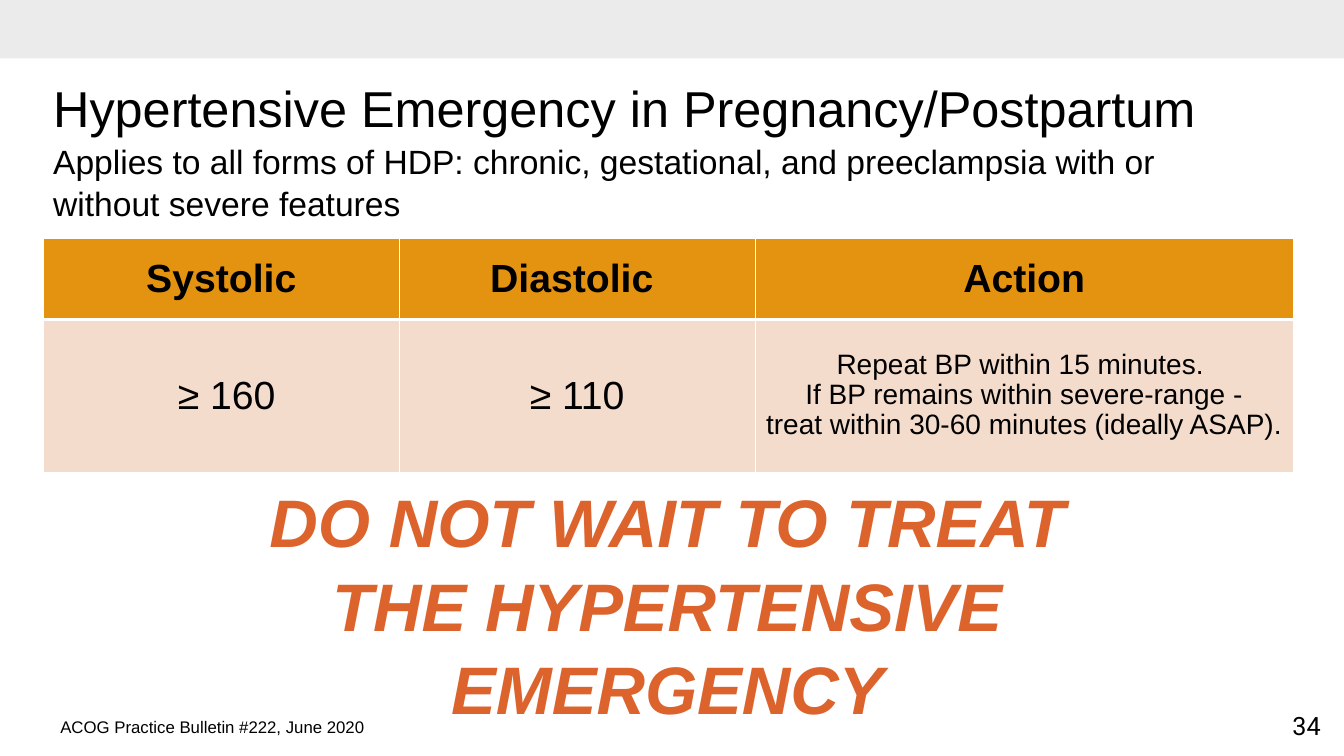
from lxml.etree import SubElement as Sub
from pptx import Presentation
from pptx.dml.color import RGBColor
from pptx.enum.shapes import MSO_SHAPE as Form
from pptx.enum.text import MSO_ANCHOR as Anchor, PP_ALIGN as Align
from pptx.oxml.ns import qn
from pptx.util import Cm, Pt

BLACK = RGBColor(0x00, 0x00, 0x00)
WHITE = RGBColor(0xFF, 0xFF, 0xFF)
GREY = RGBColor(0xE3, 0xE3, 0xE3)
AMBER = RGBColor(0xE3, 0x93, 0x10)
PEACH = RGBColor(0xF4, 0xDC, 0xCC)
RUST = RGBColor(0xDC, 0x63, 0x2C)

BASE = {"name": "Arial", "bold": False, "italic": False}
WIDE, TALL = 33.87, 19.05
LEFT, SPAN = 1.09, 31.5
COLS = (8.97, 8.97, 13.56)
ROWS = (2.03, 3.86)
CELLS = (
    ("Systolic", "Diastolic ", "Action"),
    (" ≥ 160", "≥ 110",
     "Repeat BP within 15 minutes. \n"
     "If BP remains within severe-range -\n"
     "treat within 30-60 minutes (ideally ASAP)."),
)


def write(frame, text, size, color=BLACK, align=Align.LEFT, gap=1.0, **look):
    frame.text = text
    for para in frame.paragraphs:
        para.alignment = align
        para.line_spacing = gap
        for run in para.runs:
            run.font.size = Pt(size)
            run.font.color.rgb = color
            for key, value in {**BASE, **look}.items():
                setattr(run.font, key, value)


def label(slide, box, text, size, anchor=Anchor.TOP, wrap=True, **look):
    frame = slide.shapes.add_textbox(*map(Cm, box)).text_frame
    frame.word_wrap = wrap
    frame.vertical_anchor = anchor
    write(frame, text, size, **look)


def band(slide, box):
    bar = slide.shapes.add_shape(Form.RECTANGLE, *map(Cm, box))
    bar.shadow.inherit = False
    bar.line.fill.background()
    bar.fill.solid()
    bar.fill.fore_color.rgb = GREY
    tint = bar.fill._xPr.find(".//" + qn("a:srgbClr"))
    Sub(tint, qn("a:alpha"), val="70000")


def header(slide, box):
    left, top, width, _ = box
    label(slide, (left, top + 1.02, width, 3.68),
          "Applies to all forms of HDP: chronic, gestational, and "
          "preeclampsia with or\vwithout severe features",
          24, Anchor.MIDDLE, gap=1.04)
    label(slide, (left, top, width + 0.28, 2.03),
          "Hypertensive Emergency in Pregnancy/Postpartum",
          36, Anchor.MIDDLE)


def edge(cell, sides):
    props = cell._tc.get_or_add_tcPr()
    for spot, (side, width) in enumerate(sides.items()):
        line = Sub(props, qn("a:" + side), w=str(Pt(width)))
        props.insert(spot, line)
        fill = Sub(line, qn("a:solidFill"))
        Sub(fill, qn("a:srgbClr"), val=str(WHITE))


def grid(slide, box):
    table = slide.shapes.add_table(len(ROWS), len(COLS), *map(Cm, box)).table
    for col, width in zip(table.columns, COLS):
        col.width = Cm(width)
    for row, height in zip(table.rows, ROWS):
        row.height = Cm(height)
    for i, texts in enumerate(CELLS):
        head = i == 0
        for j, text in enumerate(texts):
            cell = table.cell(i, j)
            cell.vertical_anchor = Anchor.MIDDLE
            cell.fill.solid()
            cell.fill.fore_color.rgb = AMBER if head else PEACH
            long = "\n" in text
            write(cell.text_frame, text, 20 if long else 28,
                  align=Align.CENTER, gap=0.96 if long else 1.0, bold=head)
            edge(cell, {"lnL": 1, "lnR": 1, "lnT": 1 if head else 3,
                        "lnB": 3 if head else 1})


def alert(slide, box):
    label(slide, box, "DO NOT WAIT TO TREAT THE HYPERTENSIVE EMERGENCY",
          48, color=RUST, align=Align.CENTER, gap=1.04,
          bold=True, italic=True)


def footer(slide, box):
    left, top, width, height = box
    label(slide, (left, top + 0.15, 29.87, 0.76),
          "ACOG Practice Bulletin #222, June 2020", 12)
    label(slide, (left + width - 1.3, top, 1.3, height), "34", 18,
          wrap=False, align=Align.CENTER, name="Roboto")


def main():
    deck = Presentation()
    deck.slide_width, deck.slide_height = Cm(WIDE), Cm(TALL)
    slide = deck.slides.add_slide(deck.slide_layouts[6])
    band(slide, (0, 0, WIDE, 1.47))
    header(slide, (LEFT, 1.7, SPAN, 4.7))
    grid(slide, (LEFT, 6.02, SPAN, sum(ROWS)))
    alert(slide, (5.38, 11.89, 22.89, 6.4))
    footer(slide, (1.27, 17.78, 32.31, 1.02))
    deck.save("out.pptx")


if __name__ == "__main__":
    main()
